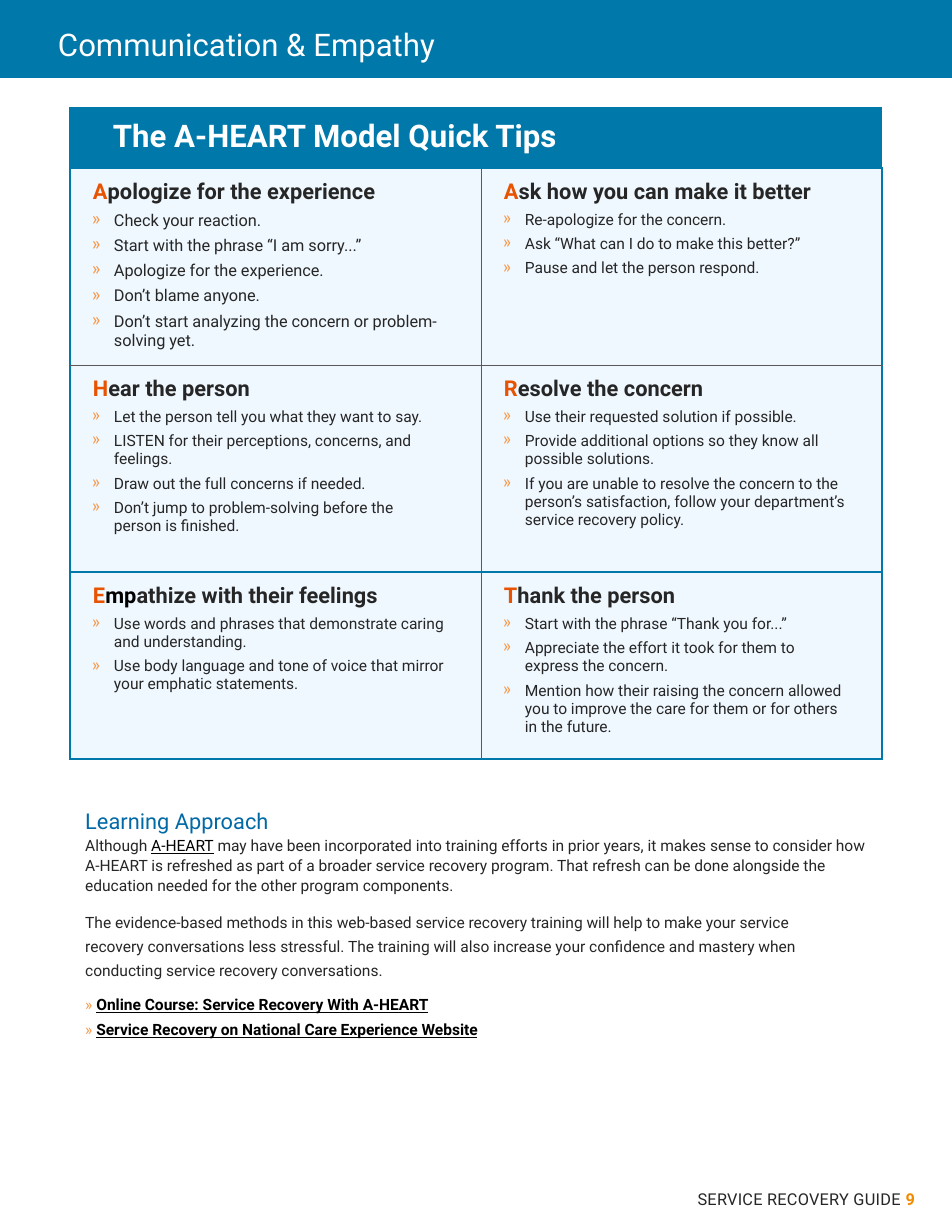
from dataclasses import dataclass

from lxml.etree import SubElement
from pptx import Presentation
from pptx.dml.color import RGBColor
from pptx.enum.shapes import MSO_SHAPE as Preset
from pptx.enum.text import MSO_ANCHOR as Anchor, MSO_AUTO_SIZE as AutoSize, PP_ALIGN as Align
from pptx.oxml.ns import qn
from pptx.util import Emu, Pt

SCALE = 914400 / 112
FONT = "Roboto"
COLORS = {
    "blue": "0078A9", "heading": "0069A6", "ink": "262626", "black": "000000", "white": "FFFFFF",
    "initial": "E75300", "mark": "F79646", "number": "F38B00", "tint": "B4DCFF", "rule": "595959",
}


@dataclass
class Span:
    text: str
    color: str = "ink"
    bold: bool = False
    underline: bool = False


@dataclass
class Style:
    size: float
    left: int = 1
    indent: int = 0
    right: int = 0
    before: float = 0
    after: float = 0
    spacing: float = 1.0
    align: Align = Align.LEFT
    bullet: str = ""


@dataclass
class Tip:
    heading: list[Span]
    items: list[str]
    size: float = 10
    right: int = 33


@dataclass
class Edge:
    color: str
    width: float


def px(length: int) -> Emu:
    return Emu(int(length * SCALE))


def rgb(name: str) -> RGBColor:
    return RGBColor.from_string(COLORS[name])


def add_color(parent, name: str):
    return SubElement(parent, qn("a:srgbClr"), val=COLORS[name])


def write_para(para, spans: list[Span], style: Style) -> None:
    props = para._p.get_or_add_pPr()
    props.set("marL", str(px(style.left)))
    props.set("marR", str(px(style.right)))
    props.set("indent", str(px(style.indent)))
    if style.bullet:
        add_color(SubElement(props, qn("a:buClr")), "mark")
        SubElement(props, qn("a:buChar"), char=style.bullet)
    else:
        SubElement(props, qn("a:buNone"))
    para.alignment, para.line_spacing = style.align, style.spacing
    para.space_before, para.space_after = Pt(style.before), Pt(style.after)
    para.font.name, para.font.size = FONT, Pt(style.size)
    for span in spans:
        run = para.add_run()
        run.text = span.text
        run.font.color.rgb = rgb(span.color)
        run.font.bold, run.font.underline = span.bold, span.underline


def write_frame(frame, paras: list[tuple[list[Span], Style]]) -> None:
    for index, (spans, style) in enumerate(paras):
        para = frame.add_paragraph() if index else frame.paragraphs[0]
        write_para(para, spans, style)


def place(box, left: int, top: int, width: int, height: int) -> None:
    box.left, box.top, box.width, box.height = map(px, (left, top, width, height))


def set_edges(cell, edges: dict[str, Edge | None]) -> None:
    props = cell._tc.get_or_add_tcPr()
    for side in ("lnL", "lnR", "lnT", "lnB"):
        edge = edges[side]
        line = SubElement(props, qn(f"a:{side}"), w=str(Pt(edge.width) if edge else 0))
        if edge:
            add_color(SubElement(line, qn("a:solidFill")), edge.color)
        else:
            SubElement(line, qn("a:noFill"))


def fill_cell(cell, color: str, opacity: int = 100) -> None:
    cell.fill.solid()
    cell.fill.fore_color.rgb = rgb(color)
    if opacity < 100:
        solid = cell._tc.tcPr.findall(qn("a:solidFill"))[-1]
        SubElement(solid[0], qn("a:alpha"), val=str(opacity * 1000))


def write_tip(cell, tip: Tip) -> None:
    title = Style(14, before=0, after=1)
    item = Style(tip.size, left=22, indent=-22, right=tip.right, before=3, after=1, bullet="»")
    write_frame(cell.text_frame, [(tip.heading, title)] + [([Span(text)], item) for text in tip.items])


def heading(initial: str, rest: str) -> list[Span]:
    return [Span(initial, "initial", True), Span(rest, "ink", True)]


TIPS = [
    [Tip(heading("A", "pologize for the experience"),
         ["Check your reaction.", "Start with the phrase “I am sorry...”", "Apologize for the experience.",
          "Don’t blame anyone.", "Don’t start analyzing the concern or problem-solving yet."], size=10.5),
     Tip(heading("A", "sk how you can make it better"),
         ["Re-apologize for the concern.", "Ask “What can I do to make this better?”",
          "Pause and let the person respond."])],
    [Tip(heading("H", "ear the person"),
         ["Let the person tell you what they want to say.",
          "LISTEN for their perceptions, concerns, and feelings.", "Draw out the full concerns if needed.",
          "Don’t jump to problem-solving before the person is finished."], right=45),
     Tip(heading("R", "esolve the concern"),
         ["Use their requested solution if possible.",
          "Provide additional options so they know all possible solutions.",
          "If you are unable to resolve the concern to the person’s satisfaction, "
          "follow your department’s service recovery policy."])],
    [Tip([Span("E", "initial", True), Span("mp", "black", True), Span("athize with their feelings", "ink", True)],
         ["Use words and phrases that demonstrate caring and understanding.",
          "Use body language and tone of voice that mirror your emphatic statements."]),
     Tip(heading("T", "hank the person"),
         ["Start with the phrase “Thank you for...”",
          "Appreciate the effort it took for them to express the concern.",
          "Mention how their raising the concern allowed you to improve the care for them "
          "or for others in the future."])],
]
COLUMNS, ROWS = [411, 401], [60, 197, 207, 187]
FRAME, THIN = Edge("blue", 1.25), Edge("rule", 0.5)
ACROSS, DOWN = [FRAME, FRAME, THIN, FRAME, FRAME], [FRAME, THIN, FRAME]


def add_tips_table(page) -> None:
    table = page.shapes.add_table(len(ROWS), len(COLUMNS), px(70), px(108),
                                  px(sum(COLUMNS)), px(sum(ROWS))).table
    table.horz_banding = False
    for column, width in zip(table.columns, COLUMNS):
        column.width = px(width)
    for row, height in zip(table.rows, ROWS):
        row.height = px(height)
    table.cell(0, 0).merge(table.cell(0, 1))
    for r in range(len(ROWS)):
        for c in range(len(COLUMNS)):
            cell = table.cell(r, c)
            verticals = DOWN if r else [FRAME, None, FRAME]
            set_edges(cell, {"lnL": verticals[c], "lnR": verticals[c + 1], "lnT": ACROSS[r], "lnB": ACROSS[r + 1]})
            cell.margin_left, cell.margin_right = px(22), px(0 if r else 22)
            cell.margin_top = cell.margin_bottom = px(11)
            fill_cell(cell, "tint" if r else "blue", 20 if r else 100)
            if r:
                write_tip(cell, TIPS[r - 1][c])
    write_frame(table.cell(0, 0).text_frame,
                [([Span("The A-HEART Model Quick Tips", "white", True)], Style(20, left=21))])


deck = Presentation()
deck.slide_width, deck.slide_height = px(952), px(1232)
page = deck.slides.add_slide(deck.slide_layouts[1])
title, body = page.placeholders

# Header band, behind the title
band = page.shapes.add_shape(Preset.RECTANGLE, 0, 0, px(952), px(78))
band.shadow.inherit = False
band.fill.solid()
band.fill.fore_color.rgb = rgb("blue")
band.line.fill.background()
title.element.addprevious(band.element)

place(title, 58, 24, 838, 39)
frame = title.text_frame
frame.auto_size, frame.vertical_anchor = AutoSize.NONE, Anchor.MIDDLE
frame.margin_left = frame.margin_right = frame.margin_bottom = 0
frame.margin_top = px(1)
write_frame(frame, [([Span("Communication & Empathy", "white")], Style(20, left=0))])

# Quick tips
add_tips_table(page)

# Learning approach
place(body, 73, 802, 804, 271)
body.text_frame.auto_size = AutoSize.NONE
link = Style(10, left=22, indent=-21, before=1, spacing=1.25)
links = ["Online Course: Service Recovery With A-HEART", "Service Recovery on National Care Experience Website"]
write_frame(body.text_frame, [
    ([Span("Learning Approach", "heading")], Style(14)),
    ([Span("Although "), Span("A-HEART", "black", underline=True),
      Span(" may have been incorporated into training efforts in prior years, it makes sense to consider how "
           "A-HEART is refreshed as part of a broader service recovery program. That refresh can be done "
           "alongside the education needed for the other program components.")],
     Style(10, before=1, spacing=1.05)),
    ([Span("The evidence-based methods in this web-based service recovery training will help to make your service "
           "recovery conversations less stressful. The training will also increase your confidence and mastery "
           "when conducting service recovery conversations.")],
     Style(10, right=46, before=8.2, after=6, spacing=1.3)),
] + [([Span("» ", "mark"), Span(text, "black", True, True)], link) for text in links])

# Footer
footer = page.shapes.add_textbox(px(28), px(1184), px(898), px(31))
footer.text_frame.word_wrap = True
write_frame(footer.text_frame, [([Span("SERVICE RECOVERY GUIDE "), Span("9", "number", True)],
                                 Style(10.5, align=Align.RIGHT))])
for run in footer.text_frame.paragraphs[0].runs:
    run.font._element.set("spc", "20")

deck.save("out.pptx")
